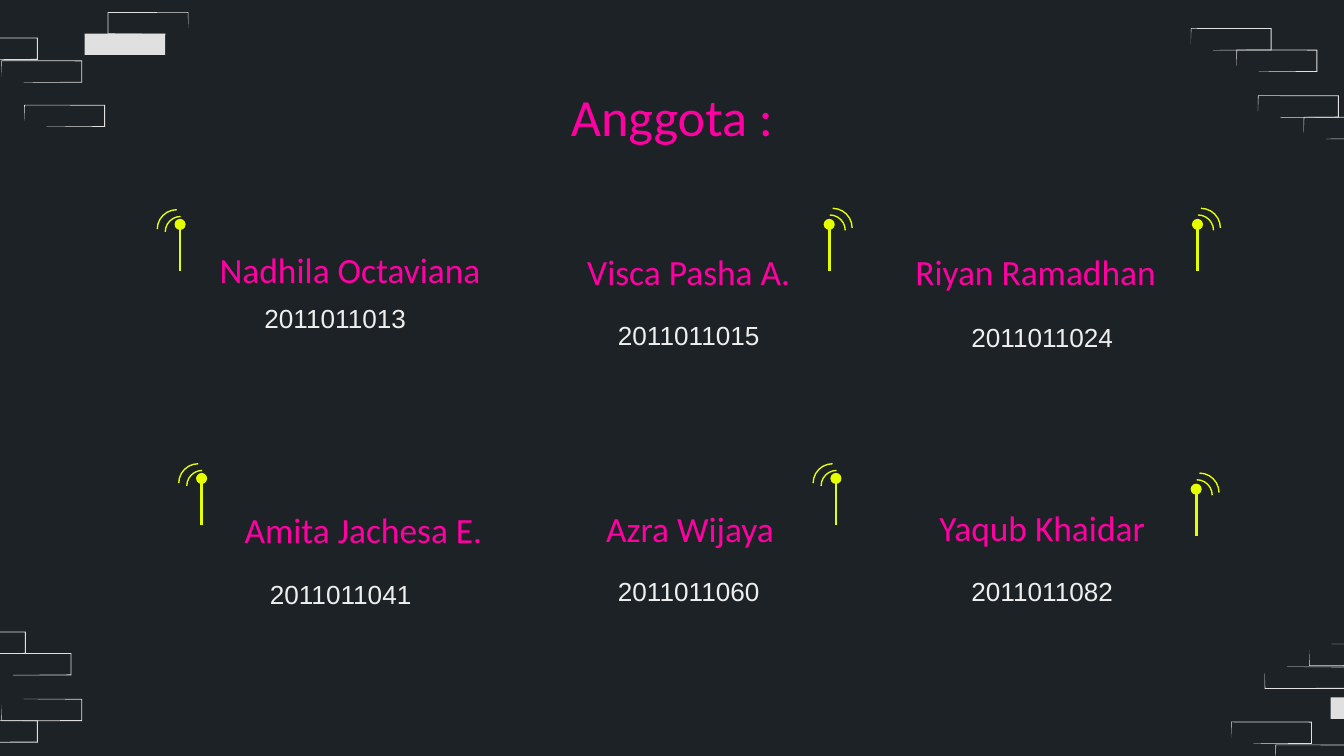
from dataclasses import dataclass

import lxml.etree
import pptx
import pptx.dml.color
import pptx.enum.shapes
import pptx.enum.text
import pptx.oxml.ns
import pptx.util

PX = 9144  # EMU per px, 100 px to the inch
SLIDE_WIDTH = 1000
SHAPES = pptx.enum.shapes.MSO_SHAPE
ANCHORS = pptx.enum.text.MSO_ANCHOR


@dataclass(frozen=True)
class Theme:
    background: str = "1C2225"
    brick: str = "E0E0E0"
    heading: str = "FF00A3"
    number: str = "EEEEEE"
    antenna: str = "E5FF00"
    heading_font: str = "Calibri"
    number_font: str = "Arial"
    title_size: int = 28
    name_size: int = 19
    number_size: int = 14
    mast_width: float = 1.5
    wave_width: float = 0.75


THEME = Theme()


@dataclass(frozen=True)
class Box:
    left: int
    top: int
    width: int
    height: int

    def emu(self) -> tuple[int, ...]:
        return tuple(v * PX for v in (self.left, self.top, self.width, self.height))


@dataclass(frozen=True)
class Brick:
    left: int
    top: int
    flip_x: bool = False
    flip_y: bool = False


@dataclass(frozen=True)
class Member:
    name: str
    number: str
    name_box: Box
    number_box: Box


@dataclass(frozen=True)
class Antenna:
    x: int
    top: int
    faces_left: bool


# Sketchy brick outline, in tenths of a px
BRICK_WIDTH, BRICK_HEIGHT = 602, 165
BRICK_POINTS = [(0, 0), (602, 0), (602, 165), (165, 165), (170, 163),
                (595, 159), (595, 6), (5, 4), (0, 120)]

BRICKS = [
    Brick(80, 9, flip_x=True),
    Brick(-32, 28), Brick(1, 45), Brick(18, 78),
    Brick(-41, 470), Brick(-7, 486),
    Brick(1, 520, flip_y=True), Brick(-32, 536, flip_y=True),
    Brick(886, 21), Brick(920, 37), Brick(936, 71), Brick(970, 87),
    Brick(974, 479, flip_y=True), Brick(941, 496, flip_y=True),
    Brick(916, 537), Brick(949, 554),
]
SOLID_BRICKS = [Box(63, 25, 60, 16), Box(990, 519, 60, 16)]

MEMBERS = [
    Member("Nadhila Octaviana", "2011011013", Box(131, 173, 259, 53), Box(126, 215, 247, 79)),
    Member("Visca Pasha A.", "2011011015", Box(389, 175, 247, 53), Box(389, 228, 247, 79)),
    Member("Riyan Ramadhan", "2011011024", Box(647, 175, 247, 53), Box(652, 229, 247, 79)),
    Member("Amita Jachesa E.", "2011011041", Box(147, 367, 247, 53), Box(130, 420, 247, 79)),
    Member("Azra Wijaya", "2011011060", Box(390, 366, 247, 53), Box(389, 418, 247, 79)),
    Member("Yaqub Khaidar", "2011011082", Box(652, 365, 247, 53), Box(652, 418, 247, 79)),
]

ANTENNAS = [
    Antenna(134, 167, True), Antenna(617, 167, False), Antenna(891, 167, False),
    Antenna(150, 356, True), Antenna(622, 356, True), Antenna(890, 364, False),
]
MAST_HEIGHT = 35


def rgb(value: str) -> pptx.dml.color.RGBColor:
    return pptx.dml.color.RGBColor.from_string(value)


def paint_brick(shape) -> None:
    shape.shadow.inherit = False
    shape.fill.solid()
    shape.fill.fore_color.rgb = rgb(THEME.brick)
    shape.line.fill.background()


def draw_brick(slide, brick: Brick) -> None:
    points = [(BRICK_WIDTH - x if brick.flip_x else x,
               BRICK_HEIGHT - y if brick.flip_y else y) for x, y in BRICK_POINTS]
    builder = slide.shapes.build_freeform(*points[0], scale=PX / 10)
    builder.add_line_segments(points[1:], close=True)
    paint_brick(builder.convert_to_shape(brick.left * PX, brick.top * PX))


def draw_text(slide, text: str, box: Box, font: str, size: int, color: str,
              anchor=ANCHORS.TOP) -> None:
    text_frame = slide.shapes.add_textbox(*box.emu()).text_frame
    text_frame.word_wrap = True
    text_frame.vertical_anchor = anchor
    text_frame.margin_left = text_frame.margin_right = 10 * PX
    text_frame.margin_top = text_frame.margin_bottom = 10 * PX
    text_frame.text = text
    paragraph = text_frame.paragraphs[0]
    paragraph.alignment = pptx.enum.text.PP_ALIGN.CENTER
    run_font = paragraph.runs[0].font
    run_font.name, run_font.size = font, pptx.util.Pt(size)
    run_font.color.rgb = rgb(color)


def draw_member(slide, member: Member) -> None:
    draw_text(slide, member.name, member.name_box, THEME.heading_font,
              THEME.name_size, THEME.heading, ANCHORS.BOTTOM)
    draw_text(slide, member.number, member.number_box, THEME.number_font,
              THEME.number_size, THEME.number)


def draw_antenna(slide, antenna: Antenna) -> None:
    group = slide.shapes.add_group_shape()
    x, top = antenna.x, antenna.top

    # Mast with a round tip
    mast = group.shapes.add_connector(pptx.enum.shapes.MSO_CONNECTOR.STRAIGHT,
                                      x * PX, top * PX, x * PX, (top + MAST_HEIGHT) * PX)
    mast.line.color.rgb = rgb(THEME.antenna)
    mast.line.width = pptx.util.Pt(THEME.mast_width)
    qn = pptx.oxml.ns.qn
    lxml.etree.SubElement(mast.line._get_or_add_ln(), qn("a:headEnd"), type="oval")
    lxml.etree.SubElement(mast._element.spPr, qn("a:effectLst"))

    # Two signal waves, a quarter circle each
    if antenna.faces_left:
        waves = [Box(x - 11, top - 6, 23, 23), Box(x - 17, top - 11, 29, 29)]
    else:
        waves = [Box(x - 11, top - 7, 23, 23), Box(x - 12, top - 12, 29, 29)]
    for box in waves:
        wave = group.shapes.add_shape(SHAPES.ARC, *box.emu())
        wave.rotation = 270 if antenna.faces_left else 0
        wave.shadow.inherit = False
        wave.fill.background()
        wave.line.color.rgb = rgb(THEME.antenna)
        wave.line.width = pptx.util.Pt(THEME.wave_width)


def main() -> None:
    presentation = pptx.Presentation()
    presentation.slide_width = SLIDE_WIDTH * PX
    presentation.slide_height = presentation.slide_width * 9 // 16
    slide = presentation.slides.add_slide(presentation.slide_layouts[6])
    slide.background.fill.solid()
    slide.background.fill.fore_color.rgb = rgb(THEME.background)

    # Brick corners
    for box in SOLID_BRICKS:
        paint_brick(slide.shapes.add_shape(SHAPES.RECTANGLE, *box.emu()))
    for brick in BRICKS:
        draw_brick(slide, brick)

    # Title and members
    draw_text(slide, "Anggota :", Box(78, 53, 844, 63), THEME.heading_font,
              THEME.title_size, THEME.heading)
    for member in MEMBERS:
        draw_member(slide, member)

    # Antennas
    for antenna in ANTENNAS:
        draw_antenna(slide, antenna)

    presentation.save("out.pptx")


if __name__ == "__main__":
    main()
